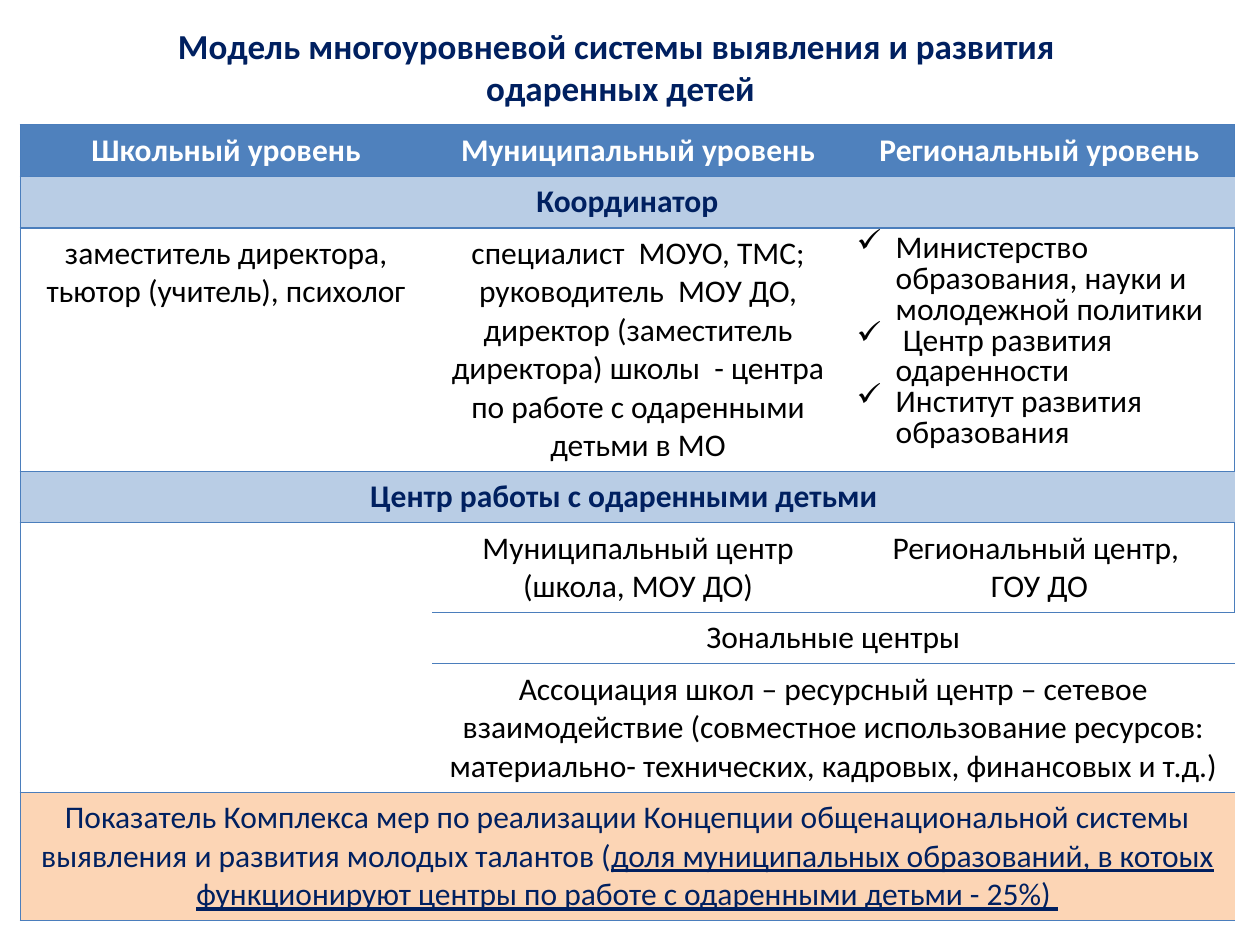
from lxml.etree import SubElement
from pptx import Presentation
from pptx.dml.color import RGBColor
from pptx.enum.text import MSO_ANCHOR, PP_ALIGN
from pptx.oxml import parse_xml
from pptx.oxml.ns import nsdecls, qn
from pptx.util import Inches, Pt

COLORS = {
    "navy": "002060", "black": "000000", "white": "FFFFFF", "header": "4F81BD",
    "section": "B9CDE5", "result": "FCD5B5", "border": "4B7EBC",
}
NO_STYLE = "{2D5ABB26-0587-4C30-8999-92F81FD0307C}"
COL_WIDTHS = [3.27, 3.27, 3.1]
ROW_HEIGHTS = [0.41, 0.41, 1.93, 0.41, 0.71, 0.41, 1.02, 1.02]

# Formats of the kinds of cell
HEADER = dict(fill="header", color="white", bold=True)
SECTION = dict(fill="section", color="navy", bold=True)
BODY = {}
CHECKS = dict(align=PP_ALIGN.LEFT, bullet="✓", spacing=0.8)
RESULT = dict(fill="result", color="navy")

# Row, column, rows spanned, columns spanned, paragraphs, format
CELLS = [
    (0, 0, 1, 1, ["Школьный уровень"], HEADER),
    (0, 1, 1, 1, ["Муниципальный уровень"], HEADER),
    (0, 2, 1, 1, ["Региональный уровень"], HEADER),
    (1, 0, 1, 3, ["Координатор"], SECTION),
    (2, 0, 1, 1, ["заместитель директора, тьютор (учитель), психолог"], BODY),
    (2, 1, 1, 1, ["специалист  МОУО, ТМС; руководитель  МОУ ДО, директор "
                  "(заместитель директора) школы  - центра по работе с "
                  "одаренными детьми в МО"], BODY),
    (2, 2, 1, 1, ["Министерство образования, науки и молодежной политики",
                  " Центр развития одаренности",
                  "Институт развития образования"], CHECKS),
    (3, 0, 1, 3, ["Центр работы с одаренными детьми "], SECTION),
    (4, 0, 2, 1, [], BODY),
    (4, 1, 1, 1, ["Муниципальный центр (школа, МОУ ДО)"], BODY),
    (4, 2, 1, 1, ["Региональный центр, ", "ГОУ ДО"], BODY),
    (5, 1, 1, 2, ["Зональные центры"], BODY),
    (6, 0, 1, 1, [], BODY),
    (6, 1, 1, 2, ["Ассоциация школ – ресурсный центр – сетевое взаимодействие "
                  "(совместное использование ресурсов: материально- технических, "
                  "кадровых, финансовых и т.д.)"], BODY),
    (7, 0, 1, 3, [("Показатель Комплекса мер по реализации Концепции "
                   "общенациональной системы выявления и развития молодых талантов (",
                   "доля муниципальных образований, в котоых функционируют центры "
                   "по работе с одаренными детьми - 25%) ")], RESULT),
]


def add_bullet(p, char):
    pPr = p._p.get_or_add_pPr()
    pPr.set("marL", str(Inches(0.31)))
    pPr.set("indent", str(Inches(-0.31)))
    SubElement(pPr, qn("a:buChar"), char=char)


def write(tf, paragraphs, size=18, color="black", bold=False,
          align=PP_ALIGN.CENTER, bullet=None, spacing=None):
    """Fill a text frame; in a tuple of runs, the second is underlined."""
    for i, runs in enumerate(paragraphs):
        p = tf.paragraphs[0] if i == 0 else tf.add_paragraph()
        p.alignment = align
        if spacing:
            p.line_spacing = spacing
        if bullet:
            add_bullet(p, bullet)
        for j, text in enumerate((runs,) if isinstance(runs, str) else runs):
            for k, line in enumerate(text.split("\n")):
                if k:
                    p.add_line_break()
                r = p.add_run()
                r.text = line
                r.font.name = "Calibri"
                r.font.size = Pt(size)
                r.font.bold = bold
                r.font.color.rgb = RGBColor.from_string(COLORS[color])
                if j:
                    r.font.underline = True


def set_borders(cell, visible):
    tcPr = cell._tc.get_or_add_tcPr()
    for i, side in enumerate("LRTB"):
        paint = (f'<a:solidFill><a:srgbClr val="{COLORS["border"]}"/></a:solidFill>'
                 if side in visible else "<a:noFill/>")
        tcPr.insert(i, parse_xml(
            f'<a:ln{side} {nsdecls("a")} w="{Pt(0.75)}">{paint}</a:ln{side}>'))


def border_sides(row, col):
    """Outer frame and row lines, without lines inside the empty left block."""
    sides = {0: "L", 1: "", 2: "R"}[col]
    if col or row not in (5, 6):
        sides += "T"
    if col or row not in (4, 5):
        sides += "B"
    return sides


def add_title(slide, text):
    tf = slide.shapes.add_textbox(
        Inches(0.35), Inches(0.3), Inches(9.15), Inches(0.46)).text_frame
    tf.word_wrap = True
    tf.vertical_anchor = MSO_ANCHOR.MIDDLE
    write(tf, [text], size=20, color="navy", bold=True)


def add_levels_table(slide):
    frame = slide.shapes.add_table(
        len(ROW_HEIGHTS), len(COL_WIDTHS), Inches(0.16), Inches(0.99),
        Inches(sum(COL_WIDTHS)), Inches(sum(ROW_HEIGHTS)))
    table = frame.table
    table._tbl.tblPr.find(qn("a:tableStyleId")).text = NO_STYLE
    table.horz_banding = False
    for column, width in zip(table.columns, COL_WIDTHS):
        column.width = Inches(width)
    for row, height in zip(table.rows, ROW_HEIGHTS):
        row.height = Inches(height)

    # Contents
    for row, col, rows, cols, paragraphs, style in CELLS:
        cell = table.cell(row, col)
        if rows * cols > 1:
            cell.merge(table.cell(row + rows - 1, col + cols - 1))
        style = dict(style)
        fill = style.pop("fill", None)
        if fill:
            cell.fill.solid()
            cell.fill.fore_color.rgb = RGBColor.from_string(COLORS[fill])
        else:
            cell.fill.background()
        write(cell.text_frame, paragraphs, **style)

    # Lines
    for row in range(len(ROW_HEIGHTS)):
        for col in range(len(COL_WIDTHS)):
            set_borders(table.cell(row, col), border_sides(row, col))


def main():
    prs = Presentation()
    prs.slide_width, prs.slide_height = Inches(10), Inches(7.5)
    slide = prs.slides.add_slide(prs.slide_layouts[6])
    add_title(slide, "Модель многоуровневой системы выявления и развития \nодаренных детей")
    add_levels_table(slide)
    prs.save("out.pptx")


if __name__ == "__main__":
    main()
